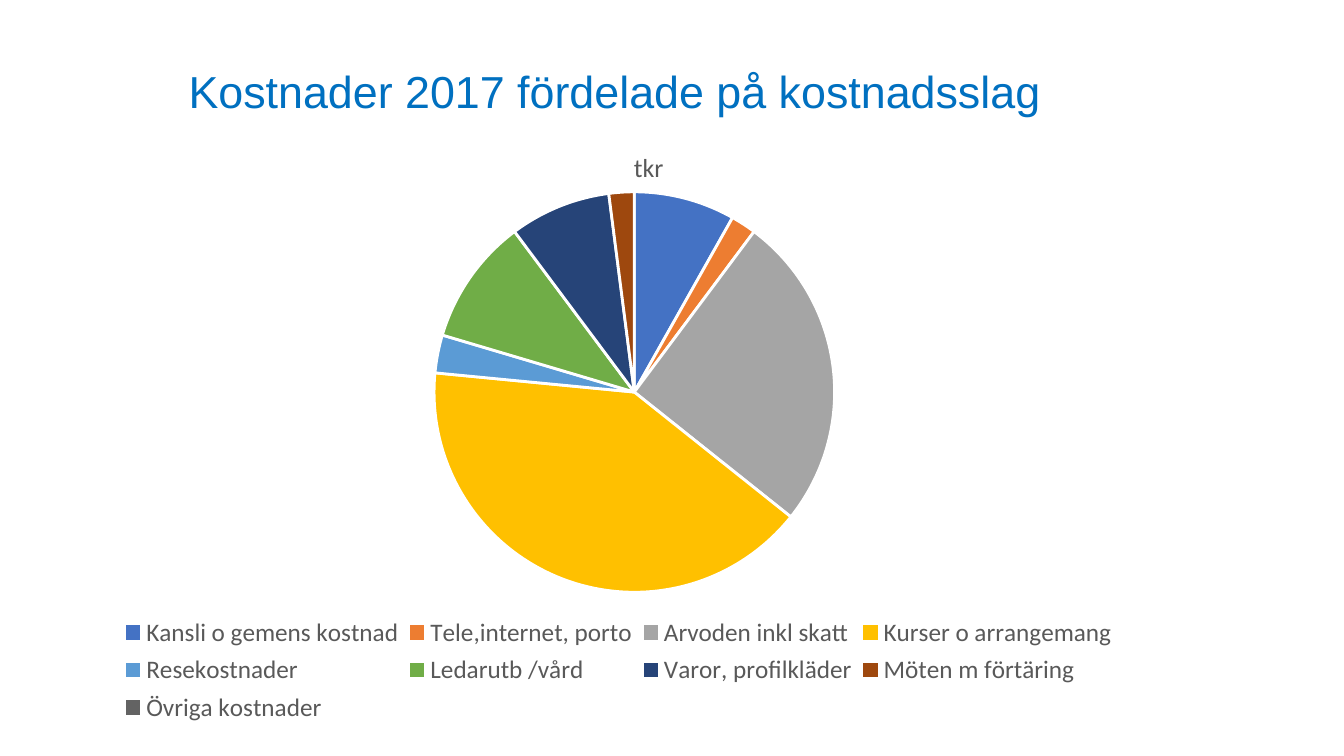
from lxml.etree import SubElement
from pptx import Presentation
from pptx.chart.data import CategoryChartData
from pptx.dml.color import RGBColor
from pptx.enum.chart import XL_CHART_TYPE, XL_LEGEND_POSITION
from pptx.enum.text import MSO_ANCHOR, PP_ALIGN
from pptx.oxml.ns import qn
from pptx.util import Inches, Pt

# Content
HEADING = "Kostnader 2017 fördelade på kostnadsslag"
UNIT = "tkr"
COSTS = [
    ("Kansli o gemens kostnad", 8, "4472C4"),
    ("Tele,internet, porto", 2, "ED7D31"),
    ("Arvoden inkl skatt", 25, "A5A5A5"),
    ("Kurser o arrangemang", 40, "FFC000"),
    ("Resekostnader", 3, "5B9BD5"),
    ("Ledarutb /vård", 10, "70AD47"),
    ("Varor, profilkläder", 8, "264478"),
    ("Möten m förtäring", 2, "9E480E"),
    ("Övriga kostnader", 0, "636363"),
]


def color(hex_code):
    return RGBColor.from_string(hex_code)


def format_font(font, size, name, hex_code):
    font.size, font.name, font.bold = Pt(size), name, False
    font.color.rgb = color(hex_code)


def write_text(frame, text, size, name, hex_code, align=None, spacing=None):
    para = frame.paragraphs[0]
    para.alignment, para.line_spacing = align, spacing
    span = para.add_run()
    span.text = text
    format_font(span.font, size, name, hex_code)


def set_layout(parent, index, **settings):
    """Place a chart part by fractions of the chart area."""
    for old in parent.findall(qn("c:layout")):
        parent.remove(old)
    layout = SubElement(parent, qn("c:layout"))
    parent.insert(index, layout)
    manual = SubElement(layout, qn("c:manualLayout"))
    for tag, value in settings.items():
        SubElement(manual, qn(f"c:{tag}")).set("val", str(value))


deck = Presentation()
deck.slide_width, deck.slide_height = Inches(13.33), Inches(7.5)
page = deck.slides.add_slide(deck.slide_layouts[5])

# Heading
heading = page.shapes.title
heading.left, heading.top = Inches(1.77), Inches(0.4)
heading.width, heading.height = Inches(10.65), Inches(1.07)
heading.text_frame.vertical_anchor = MSO_ANCHOR.MIDDLE
write_text(heading.text_frame, HEADING, 32, "Arial", "0070C0",
           align=PP_ALIGN.LEFT, spacing=0.9)

# Pie chart
data = CategoryChartData()
data.categories = [name for name, _, _ in COSTS]
data.add_series(UNIT, [value for _, value, _ in COSTS])
chart = page.shapes.add_chart(
    XL_CHART_TYPE.PIE, Inches(1.03), Inches(1.37), Inches(10.42), Inches(5.93), data
).chart
format_font(chart.font, 10, "Calibri", "000000")
pie = chart.plots[0]
pie.vary_by_categories = True
for index, (_, _, hex_code) in enumerate(COSTS):
    slice_format = pie.series[0].points[index].format
    slice_format.fill.solid()
    slice_format.fill.fore_color.rgb = color(hex_code)
    slice_format.line.color.rgb = color("FFFFFF")
    slice_format.line.width = Pt(2)
set_layout(pie._element.getparent(), 0, layoutTarget="inner",
           xMode="edge", yMode="edge", x=0.02, y=0.09, w=0.97, h=0.67)

# Chart title and legend
write_text(chart.chart_title.text_frame, UNIT, 18.6, "Calibri", "595959")
set_layout(chart.chart_title._element, 1, xMode="edge", yMode="edge", x=0.5, y=0.01)
chart.has_legend = True
chart.legend.position = XL_LEGEND_POSITION.BOTTOM
chart.legend.include_in_layout = False
format_font(chart.legend.font, 18, "Calibri", "595959")
set_layout(chart.legend._element, 1, xMode="edge", yMode="edge",
           x=0.01, y=0.79, w=0.96, h=0.2)

deck.save("out.pptx")
